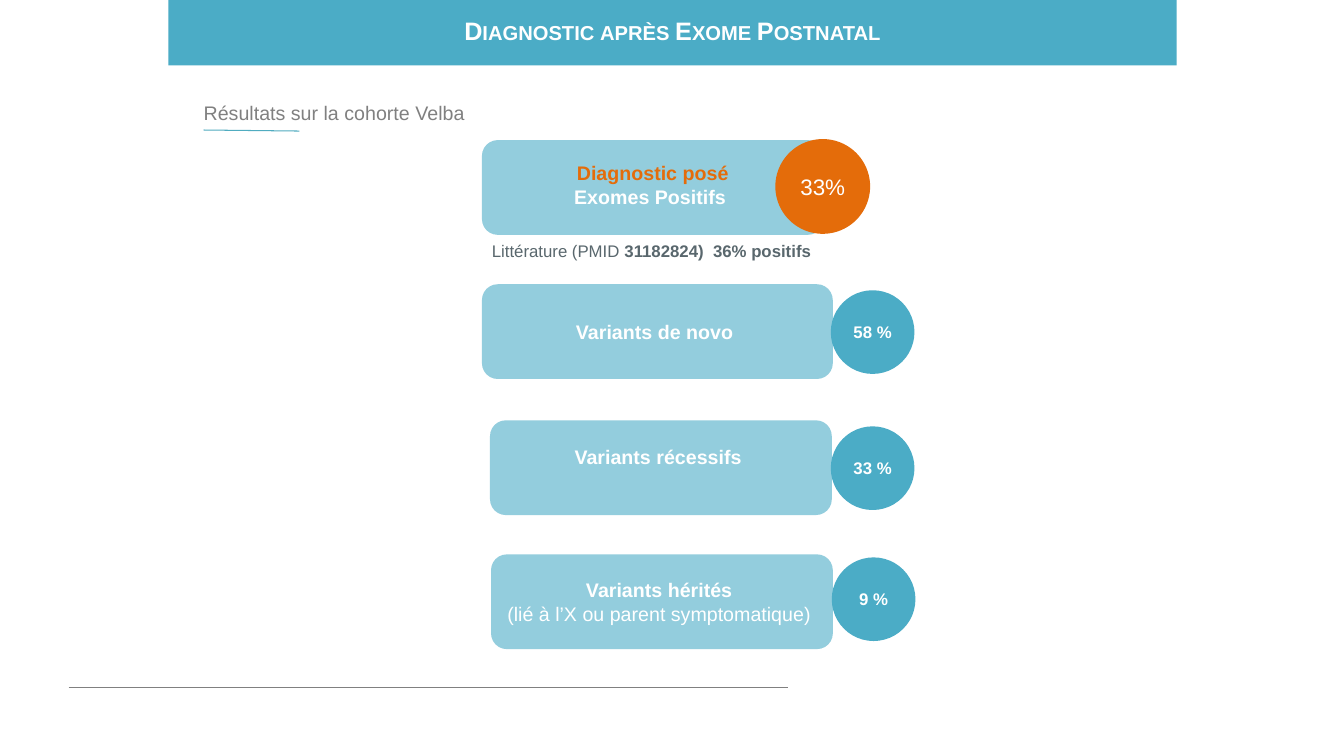
from lxml import etree
from pptx import Presentation
from pptx.dml.color import RGBColor
from pptx.enum.shapes import MSO_CONNECTOR, MSO_SHAPE
from pptx.enum.text import MSO_ANCHOR, PP_ALIGN
from pptx.oxml.ns import qn
from pptx.util import Inches, Pt

RECTANGLE, ROUNDED, OVAL = MSO_SHAPE.RECTANGLE, MSO_SHAPE.ROUNDED_RECTANGLE, MSO_SHAPE.OVAL
STRAIGHT = MSO_CONNECTOR.STRAIGHT
MIDDLE, CENTER = MSO_ANCHOR.MIDDLE, PP_ALIGN.CENTER

COLORS = {
    "teal": "4BACC6", "pale": "93CDDD", "orange": "E46C0A", "white": "FFFFFF",
    "gray": "808080", "slate": "59676D", "accent": "50ACC0",
}
FONT = "Arial"
CARD_HEIGHT = 0.94

# left, top, width, extra bottom inset, lines (text, color, bold), badge
# badge: text, top, diameter, overlap with the card, color, size, bold
CARDS = [
    (4.78, 1.39, 3.39, 0.06,
     [("Diagnostic posé", "orange", True), ("Exomes Positifs ", "white", True)],
     ("33%", 1.38, 0.94, 0.48, "orange", 16, False)),
    (4.78, 2.82, 3.48, 0, [("Variants de novo ", "white", True)],
     ("58 %", 2.88, 0.83, 0.02, "teal", 12, True)),
    (4.86, 4.17, 3.39, 0.22, [("Variants récessifs ", "white", True)],
     ("33 %", 4.23, 0.83, 0.01, "teal", 12, True)),
    (4.87, 5.5, 3.39, 0,
     [("Variants hérités ", "white", True),
      ("(lié à l’X ou parent symptomatique) ", "white", False)],
     ("9 %", 5.53, 0.83, 0.01, "teal", 12, True)),
]


def style_font(font, size, color, bold=False):
    font.name, font.size, font.bold = FONT, Pt(size), bold
    font.color.rgb = RGBColor.from_string(COLORS[color])


def add_filled(page, kind, box, color):
    shape = page.shapes.add_shape(kind, *map(Inches, box))
    shape.shadow.inherit = False
    shape.fill.solid()
    shape.fill.fore_color.rgb = RGBColor.from_string(COLORS[color])
    shape.line.fill.background()
    shape.text_frame.vertical_anchor = MIDDLE
    return shape


def write_lines(frame, lines, size):
    """Fill a frame with centred lines given as (text, color, bold)."""
    for index, (text, color, bold) in enumerate(lines):
        para = frame.add_paragraph() if index else frame.paragraphs[0]
        para.text, para.alignment = text, CENTER
        style_font(para.font, size, color, bold)


def add_line(page, start, end, color):
    line = page.shapes.add_connector(STRAIGHT, *map(Inches, start + end))
    line.line.color.rgb = RGBColor.from_string(COLORS[color])
    line.line.width = Pt(0.75)
    etree.SubElement(line._element.spPr, qn("a:effectLst"))


def add_textbox(page, box):
    frame = page.shapes.add_textbox(*map(Inches, box)).text_frame
    frame.word_wrap = True
    return frame


def add_title(page, box):
    banner = add_filled(page, RECTANGLE, box, "teal")
    write_lines(banner.text_frame, [("Diagnostic après Exome Postnatal", "white", True)], 18)
    span = banner.text_frame.paragraphs[0].runs[0]
    span._r.get_or_add_rPr().set("cap", "small")


def add_subtitle(page, box):
    left, top, width, height = box
    frame = add_textbox(page, box)
    frame.margin_left, frame.margin_top = Inches(0.16), Inches(0.08)
    para = frame.paragraphs[0]
    para.text = "Résultats sur la cohorte Velba"
    style_font(para.font, 14, "gray")
    start = left + 0.16
    add_line(page, (start, top + height), (start + 0.95, top + height + 0.01), "accent")


def add_reference(page, box):
    para = add_textbox(page, box).paragraphs[0]
    for text, bold in (("Littérature (PMID ", False), ("31182824)  36% positifs", True)):
        span = para.add_run()
        span.text = text
        style_font(span.font, 12, "slate", bold)


def add_card(page, box, inset, lines):
    frame = add_filled(page, ROUNDED, box, "pale").text_frame
    frame.margin_bottom = Inches(0.05 + inset)
    frame.word_wrap = True
    write_lines(frame, lines, 14)


def add_badge(page, card_right, badge):
    text, top, diameter, overlap, color, size, bold = badge
    box = (card_right - overlap, top, diameter, diameter)
    frame = add_filled(page, OVAL, box, color).text_frame
    frame.margin_left = frame.margin_right = 0
    write_lines(frame, [(text, "white", bold)], size)


def main():
    deck = Presentation()
    deck.slide_width, deck.slide_height = Inches(13.33), Inches(7.5)
    page = deck.slides.add_slide(deck.slide_layouts[6])
    add_line(page, (0.68, 6.82), (7.82, 6.82), "gray")
    add_title(page, (1.67, -0.04, 10, 0.69))
    add_subtitle(page, (1.86, 0.92, 3.39, 0.37))
    add_reference(page, (4.78, 2.34, 5.77, 0.3))
    for left, top, width, inset, lines, badge in CARDS:
        add_card(page, (left, top, width, CARD_HEIGHT), inset, lines)
        add_badge(page, left + width, badge)
    deck.save("out.pptx")


if __name__ == "__main__":
    main()
